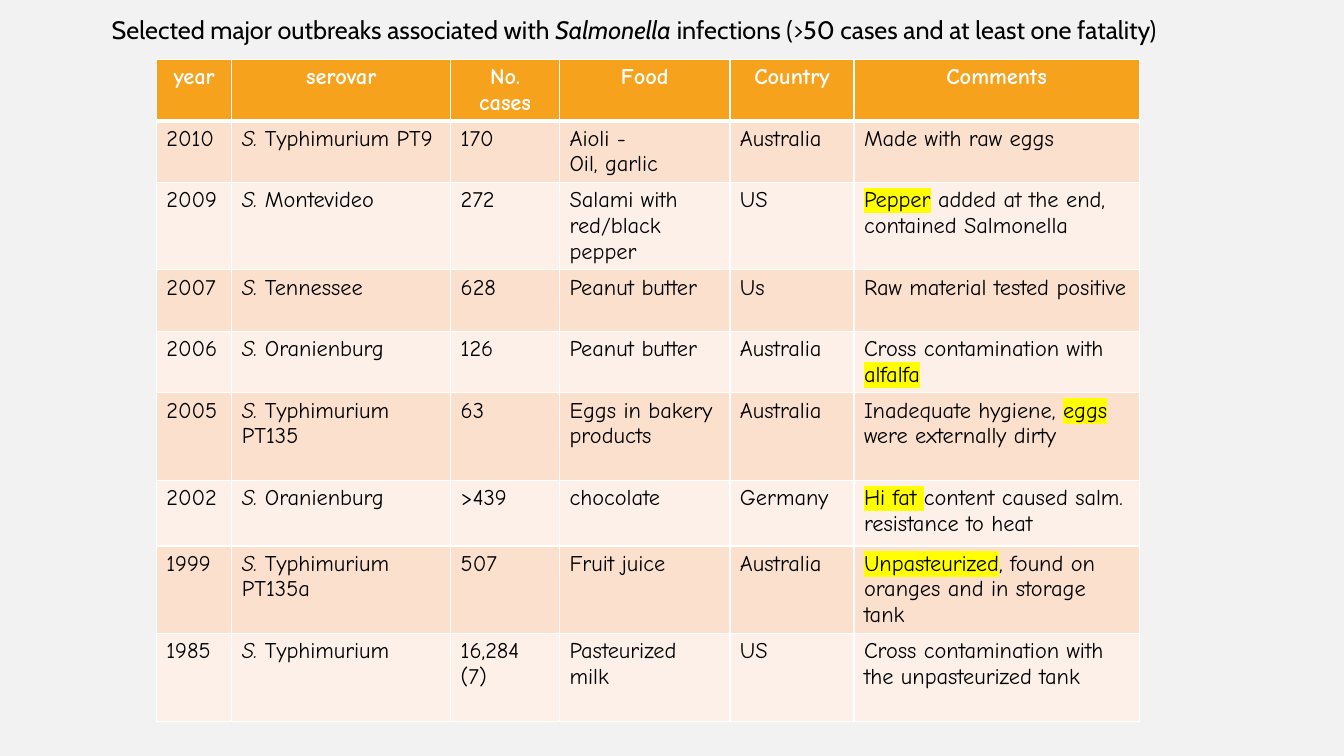
from lxml.etree import SubElement
from pptx import Presentation
from pptx.dml.color import RGBColor
from pptx.enum.text import MSO_AUTO_SIZE, PP_ALIGN
from pptx.oxml import parse_xml
from pptx.oxml.ns import nsdecls, qn
from pptx.util import Inches, Pt

TITLE = (
    "Selected major outbreaks associated with |*Salmonella |"
    "infections (>50 cases and at least one fatality)"
)
HEADERS = ["year", "serovar", "No. cases", "Food", "Country", "Comments"]
OUTBREAKS = [
    ("2010", "Typhimurium PT9", "170", "Aioli -\nOil, garlic", "Australia",
     "Made with raw eggs"),
    ("2009", "Montevideo", "272", "Salami with red/black pepper", "US",
     "#Pepper| added at the end, contained Salmonella"),
    ("2007", "Tennessee", "628", "Peanut butter", "Us",
     "Raw material tested positive"),
    ("2006", "Oranienburg", "126", "Peanut butter", "Australia",
     "Cross contamination with |#alfalfa"),
    ("2005", "Typhimurium PT135", "63", "Eggs in bakery products", "Australia",
     "Inadequate hygiene, |#eggs| were externally dirty"),
    ("2002", "Oranienburg", ">439", "chocolate", "Germany",
     "#Hi fat |content caused salm. resistance to heat"),
    ("1999", "Typhimurium PT135a", "507", "Fruit juice", "Australia",
     "#Unpasteurized|, found on oranges and in storage tank"),
    ("1985", "Typhimurium", "16,284 (7)", "Pasteurized milk", "US",
     "Cross contamination with the unpasteurized tank"),
]
COLUMN_WIDTHS = [0.75, 2.17, 1.08, 1.69, 1.23, 2.83]
ROW_HEIGHTS = [0.61, 0.61, 0.85, 0.61, 0.61, 0.87, 0.65, 0.87, 0.87]
COLORS = {
    "background": "F2F2F2",
    "header": "F6A21D",
    "odd": "FBE0CD",
    "even": "FDF0E8",
    "white": "FFFFFF",
    "text": "000000",
    "highlight": "FFFF00",
}


def write_text(frame, text, font="Comic Neue", size=16, color="text", bold=False,
               align=PP_ALIGN.LEFT):
    """Write lines of runs split by |, where * marks italic and # marks highlight."""
    frame.word_wrap = True
    for index, line in enumerate(text.split("\n")):
        paragraph = frame.add_paragraph() if index else frame.paragraphs[0]
        paragraph.alignment = align
        for piece in line.split("|"):
            run = paragraph.add_run()
            run.text = piece.lstrip("*#")
            run.font.name = font
            run.font.size = Pt(size)
            run.font.bold = bold
            run.font.italic = piece.startswith("*")
            run.font.color.rgb = RGBColor.from_string(COLORS[color])
            if piece.startswith("#"):
                properties = run.font._element
                highlight = SubElement(properties, qn("a:highlight"))
                SubElement(highlight, qn("a:srgbClr"), val=COLORS["highlight"])
                properties.find(qn("a:solidFill")).addnext(highlight)


def style_cell(cell, fill, top=1, bottom=1):
    """Fill a cell and draw its white borders with widths in points."""
    cell.fill.solid()
    cell.fill.fore_color.rgb = RGBColor.from_string(COLORS[fill])
    properties = cell._tc.get_or_add_tcPr()
    borders = [("lnL", 1), ("lnR", 1), ("lnT", top), ("lnB", bottom)]
    for index, (side, width) in enumerate(borders):
        properties.insert(index, parse_xml(
            f'<a:{side} {nsdecls("a")} w="{Pt(width)}"><a:solidFill>'
            f'<a:srgbClr val="{COLORS["white"]}"/></a:solidFill></a:{side}>'
        ))


def add_outbreak_table(slide):
    """Add the table of outbreaks with its header row."""
    table = slide.shapes.add_table(
        len(ROW_HEIGHTS), len(COLUMN_WIDTHS), Inches(1.55), Inches(0.59),
        Inches(sum(COLUMN_WIDTHS)), Inches(sum(ROW_HEIGHTS)),
    ).table
    for column, width in zip(table.columns, COLUMN_WIDTHS):
        column.width = Inches(width)
    for row, height in zip(table.rows, ROW_HEIGHTS):
        row.height = Inches(height)
    for index, header in enumerate(HEADERS):
        cell = table.cell(0, index)
        style_cell(cell, "header", bottom=3)
        write_text(cell.text_frame, header, color="white", bold=True,
                   align=PP_ALIGN.CENTER)
    for row_index, outbreak in enumerate(OUTBREAKS, start=1):
        for column_index, text in enumerate(outbreak):
            cell = table.cell(row_index, column_index)
            style_cell(cell, "odd" if row_index % 2 else "even",
                       top=3 if row_index == 1 else 1)
            is_serovar = HEADERS[column_index] == "serovar"
            write_text(cell.text_frame, f"*S. |{text}" if is_serovar else text)


def main():
    """Build the slide and save it."""
    presentation = Presentation()
    presentation.slide_width = Inches(13.33)
    presentation.slide_height = Inches(7.5)
    slide = presentation.slides.add_slide(presentation.slide_layouts[6])
    slide.background.fill.solid()
    slide.background.fill.fore_color.rgb = RGBColor.from_string(COLORS["background"])
    add_outbreak_table(slide)
    title = slide.shapes.add_textbox(Inches(1.01), Inches(0.09), Inches(10.95), Inches(0.4))
    write_text(title.text_frame, TITLE, font="Cabin", size=18)
    title.text_frame.auto_size = MSO_AUTO_SIZE.SHAPE_TO_FIT_TEXT
    presentation.save("out.pptx")


if __name__ == "__main__":
    main()
